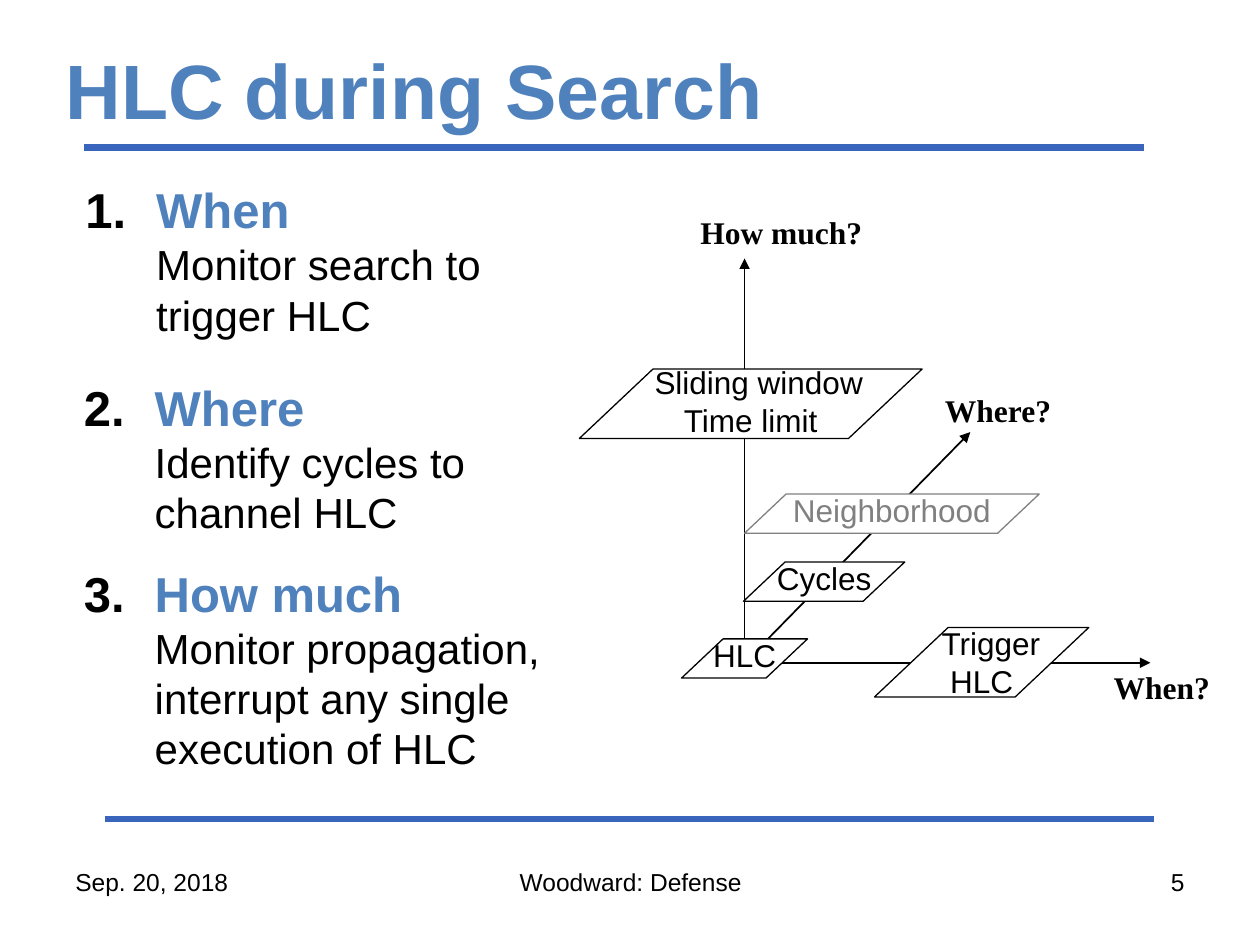
from lxml import etree
from pptx import Presentation
from pptx.dml.color import RGBColor
from pptx.enum.shapes import MSO_CONNECTOR, MSO_SHAPE
from pptx.enum.text import MSO_ANCHOR, PP_ALIGN
from pptx.oxml.ns import qn
from pptx.util import Cm, Pt

BLACK = RGBColor(0x00, 0x00, 0x00)
WHITE = RGBColor(0xFF, 0xFF, 0xFF)
GRAY = RGBColor(0x80, 0x80, 0x80)
HEADING_BLUE = RGBColor(0x4F, 0x81, 0xBD)
RULE_BLUE = RGBColor(0x3A, 0x65, 0xBC)


def format_font(font, size, color=BLACK, bold=False, name="Arial"):
    font.name = name
    font.size = Pt(size)
    font.bold = bold
    font.color.rgb = color


def add_line(slide, start, end, color, width, arrow=False):
    points = [Cm(value) for value in (*start, *end)]
    line = slide.shapes.add_connector(MSO_CONNECTOR.STRAIGHT, *points)
    line.line.color.rgb = color
    line.line.width = Pt(width)
    if arrow:
        etree.SubElement(line.line._get_or_add_ln(), qn("a:tailEnd"), type="triangle")
    etree.SubElement(line._element.spPr, qn("a:effectLst"))


def add_text_box(slide, left, top, width, height, wrap=True):
    box = slide.shapes.add_textbox(Cm(left), Cm(top), Cm(width), Cm(height))
    box.text_frame.word_wrap = wrap
    return box.text_frame


def add_label(slide, box, text, size, alignment=PP_ALIGN.LEFT, wrap=True, **font):
    text_frame = add_text_box(slide, *box, wrap=wrap)
    text_frame.text = text
    paragraph = text_frame.paragraphs[0]
    paragraph.alignment = alignment
    format_font(paragraph.runs[0].font, size, **font)
    return text_frame


def add_header(slide, left, top):
    title = add_label(slide, (left, top, 22.86, 1.9), "HLC during Search", 44,
                      color=HEADING_BLUE, bold=True)
    title.vertical_anchor = MSO_ANCHOR.MIDDLE
    add_line(slide, (left + 0.63, top + 2.13), (left + 21.99, top + 2.13), RULE_BLUE, 4)


def add_footer(slide, left, top):
    add_line(slide, (left + 0.84, top - 0.84), (left + 22, top - 0.84), RULE_BLUE, 4)
    add_label(slide, (left, top, 5.92, 1.32), "Sep. 20, 2018", 14)
    add_label(slide, (left + 7.42, top, 8.05, 1.32), "Woodward: Defense", 14, PP_ALIGN.CENTER)
    add_label(slide, (left + 16.94, top, 5.92, 1.32), "5", 14, PP_ALIGN.RIGHT)


def add_question(slide, left, top, width, height, number, heading, *lines):
    """Numbered heading with its explanation below, in one paragraph."""
    paragraph = add_text_box(slide, left, top, width, height).paragraphs[0]
    heading_run = paragraph.add_run()
    heading_run.text = heading
    format_font(heading_run.font, 28, HEADING_BLUE, True)
    for line in lines:
        paragraph.add_line_break()
        run = paragraph.add_run()
        run.text = line
        format_font(run.font, 24)

    # Hanging indent, spacing and black automatic number
    properties = paragraph._p.get_or_add_pPr()
    properties.set("marL", str(Cm(1.43)))
    properties.set("indent", str(-Cm(1.43)))
    spacing = etree.SubElement(properties, qn("a:spcBef"))
    etree.SubElement(spacing, qn("a:spcPct"), val="20000")
    bullet_color = etree.SubElement(properties, qn("a:buClr"))
    etree.SubElement(bullet_color, qn("a:srgbClr"), val=str(BLACK))
    etree.SubElement(properties, qn("a:buFont"), typeface="+mj-lt")
    etree.SubElement(properties, qn("a:buAutoNum"), type="arabicPeriod", startAt=str(number))


def add_plate(slide, left, top, width, lines, color=BLACK, bottom_inset=0.13):
    height = 0.79 if len(lines) == 1 else 1.4
    plate = slide.shapes.add_shape(MSO_SHAPE.PARALLELOGRAM, Cm(left), Cm(top),
                                   Cm(width), Cm(height))
    plate.adjustments[0] = 1.06
    plate.shadow.inherit = False
    plate.fill.solid()
    plate.fill.fore_color.rgb = WHITE
    plate.line.color.rgb = color
    plate.line.width = Pt(0.75)

    text_frame = plate.text_frame
    text_frame.word_wrap = True
    text_frame.vertical_anchor = MSO_ANCHOR.MIDDLE
    text_frame.margin_left = text_frame.margin_right = text_frame.margin_top = 0
    text_frame.margin_bottom = Cm(bottom_inset)
    text_frame.text = "\n".join(lines)
    for paragraph in text_frame.paragraphs:
        paragraph.alignment = PP_ALIGN.CENTER
        format_font(paragraph.runs[0].font, 18, color)
    if len(lines) > 1:
        text_frame.paragraphs[0].alignment = PP_ALIGN.RIGHT


def add_diagram(slide, left, top):
    # Three axes from a common origin: tip, then label position and width
    axes = [
        ("When?", (11.51, 9.19), (10.52, 9.17), 2.51),
        ("Where?", (7.88, 4.54), (7.12, 3.58), 2.72),
        ("How much?", (3.33, 1.04), (2.19, 0), 3.81),
    ]
    origin = (left + 3.33, top + 9.19)
    for text, (tip_x, tip_y), (label_x, label_y), width in axes:
        add_line(slide, origin, (left + tip_x, top + tip_y), BLACK, 1, arrow=True)
        add_label(slide, (left + label_x, top + label_y, width, 1.02), text, 18,
                  wrap=False, bold=True, name="Times New Roman")

    # Plates on the axes
    add_plate(slide, left + 3.33, top + 5.79, 5.94, ["Neighborhood"], GRAY)
    add_plate(slide, left + 3.31, top + 7.16, 3.25, ["Cycles"])
    add_plate(slide, left + 2.06, top + 8.71, 2.54, ["HLC"])
    add_plate(slide, left + 5.95, top + 8.48, 4.32, ["Trigger", "HLC"], bottom_inset=0)
    add_plate(slide, left, top + 3.27, 6.91, ["Sliding window", "Time limit"])


def main():
    presentation = Presentation()
    presentation.slide_width = Cm(25.4)
    presentation.slide_height = Cm(19.05)
    slide = presentation.slides.add_slide(presentation.slide_layouts[6])

    add_header(slide, 1.07, 0.84)
    add_question(slide, 1.47, 3.5, 10.8, 4.11, 1, "When", "Monitor search to trigger HLC")
    add_question(slide, 1.44, 7.49, 10.97, 5.03, 2, "Where", "Identify cycles to channel HLC")
    add_question(slide, 1.44, 11.23, 10.54, 5.03, 3, "How much",
                 "Monitor propagation,", "interrupt any single execution of HLC")
    add_diagram(slide, 11.68, 4.17)
    add_footer(slide, 1.27, 17.35)
    presentation.save("out.pptx")


if __name__ == "__main__":
    main()
